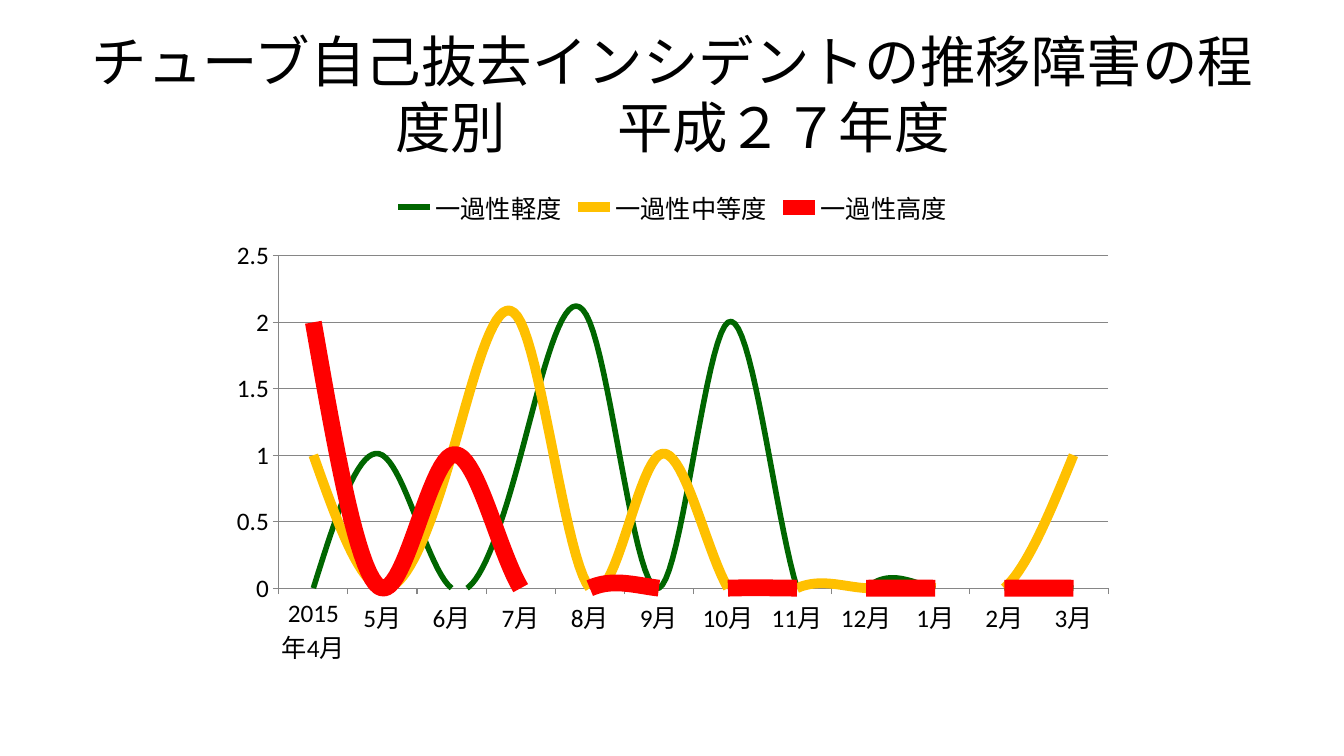
from dataclasses import dataclass

from pptx import Presentation
from pptx import util as u
from pptx.chart.data import CategoryChartData
from pptx.dml.color import RGBColor
from pptx.enum import chart as ch, text


@dataclass(frozen=True)
class Theme:
    font: str = "Calibri"
    ink: str = "000000"
    rule: str = "868686"
    title_size: float = 39.6
    chart_size: float = 18
    mild: str = "006600"
    moderate: str = "FFC000"
    severe: str = "FF0000"


THEME = Theme()
MONTHS = ["2015年4月"] + [f"{m}月" for m in (*range(5, 13), 1, 2, 3)]
# name, monthly counts, colour, line width in points
SEVERITIES = [
    ("一過性軽度", (0, 1, 0, 1, 2, 0, 2, 0, 0, 0, 0, 0), THEME.mild, 4),
    ("一過性中等度", (1, 0, 1, 2, 0, 1, 0, 0, 0, 0, 0, 1), THEME.moderate, 7),
    ("一過性高度", (2, 0, 1, 0, 0, 0, 0, 0, 0, 0, 0, 0), THEME.severe, 12),
]


def set_font(font, size):
    font.name = THEME.font
    font.size = u.Pt(size)
    font.color.rgb = RGBColor.from_string(THEME.ink)


def set_line(line, color, width):
    line.color.rgb = RGBColor.from_string(color)
    line.width = u.Pt(width)


def add_title(slide, wording):
    title = slide.shapes.title
    title.left, title.top = u.Inches(0.67), u.Inches(0.3)
    title.width, title.height = u.Inches(12), u.Inches(1.25)
    tf = title.text_frame
    tf.text = wording
    tf.word_wrap = True
    tf.auto_size = text.MSO_AUTO_SIZE.NONE
    tf.vertical_anchor = text.MSO_ANCHOR.MIDDLE
    p = tf.paragraphs[0]
    p.alignment = text.PP_ALIGN.CENTER
    set_font(p.font, THEME.title_size)


def style_axes(chart):
    values = chart.value_axis
    values.minimum_scale, values.maximum_scale = 0, 2.5
    values.major_unit = 0.5
    values.has_major_gridlines = True
    set_line(values.major_gridlines.format.line, THEME.rule, 0.75)
    for axis in (chart.category_axis, values):
        axis.major_tick_mark = ch.XL_TICK_MARK.OUTSIDE
        axis.minor_tick_mark = ch.XL_TICK_MARK.NONE
        set_line(axis.format.line, THEME.rule, 0.75)


def add_incident_chart(slide):
    data = CategoryChartData()
    data.categories = MONTHS
    for name, counts, _, _ in SEVERITIES:
        data.add_series(name, counts)
    chart = slide.shapes.add_chart(
        ch.XL_CHART_TYPE.LINE, u.Inches(2.17), u.Inches(1.75),
        u.Inches(9), u.Inches(4.95), data).chart
    set_font(chart.font, THEME.chart_size)
    chart.has_title = False
    chart.has_legend = True
    chart.legend.position = ch.XL_LEGEND_POSITION.TOP
    chart.legend.include_in_layout = False
    style_axes(chart)
    plot = chart.plots[0]
    plot.vary_by_categories = False
    for series, (_, _, color, width) in zip(plot.series, SEVERITIES):
        series.smooth = True
        series.marker.style = ch.XL_MARKER_STYLE.NONE
        set_line(series.format.line, color, width)


def main():
    prs = Presentation()
    prs.slide_width, prs.slide_height = u.Inches(13.33), u.Inches(7.5)
    slide = prs.slides.add_slide(prs.slide_layouts.get_by_name("Title Only"))
    add_title(slide, "チューブ自己抜去インシデントの推移障害の程度別　　平成２７年度")
    add_incident_chart(slide)
    prs.save("out.pptx")


if __name__ == "__main__":
    main()
